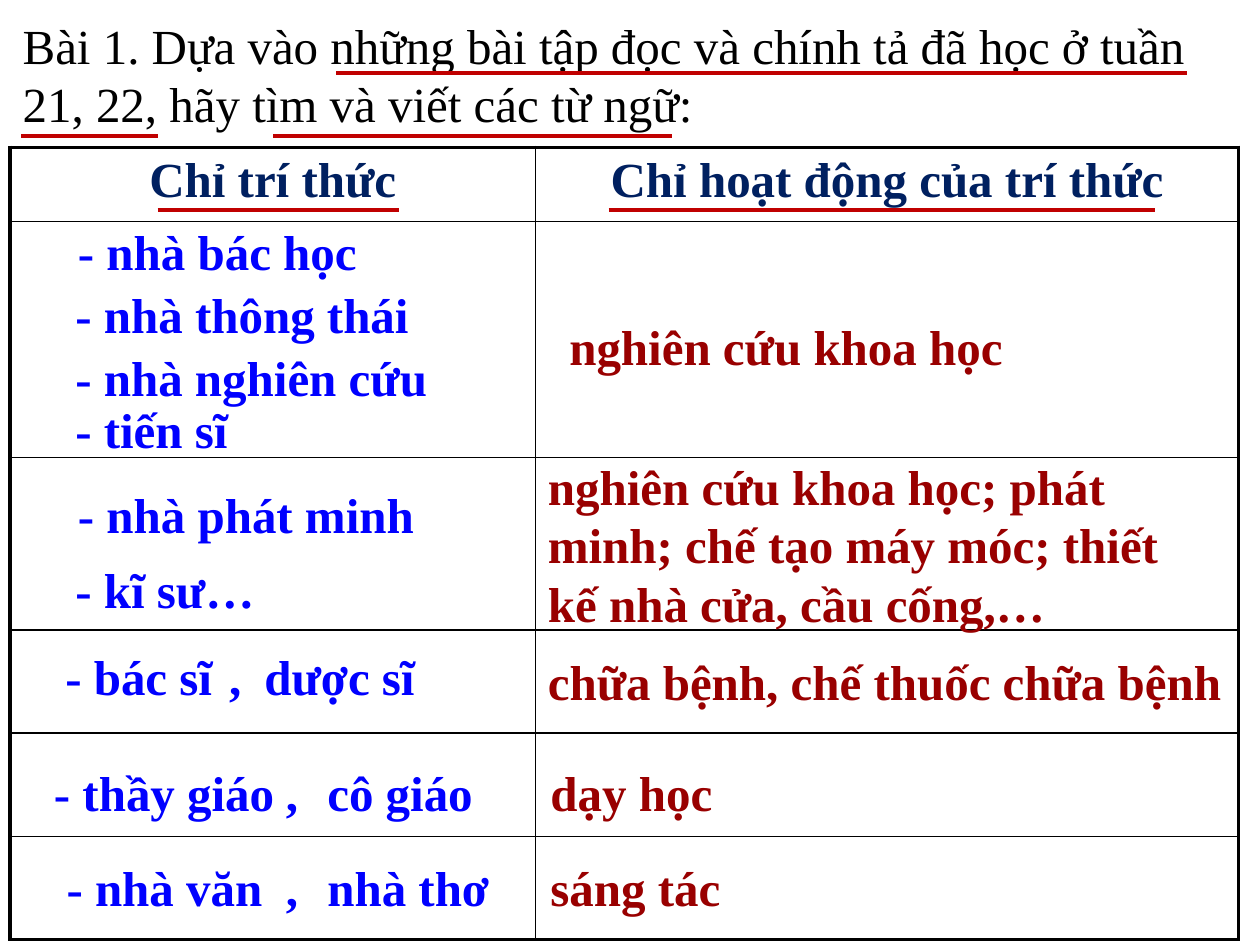
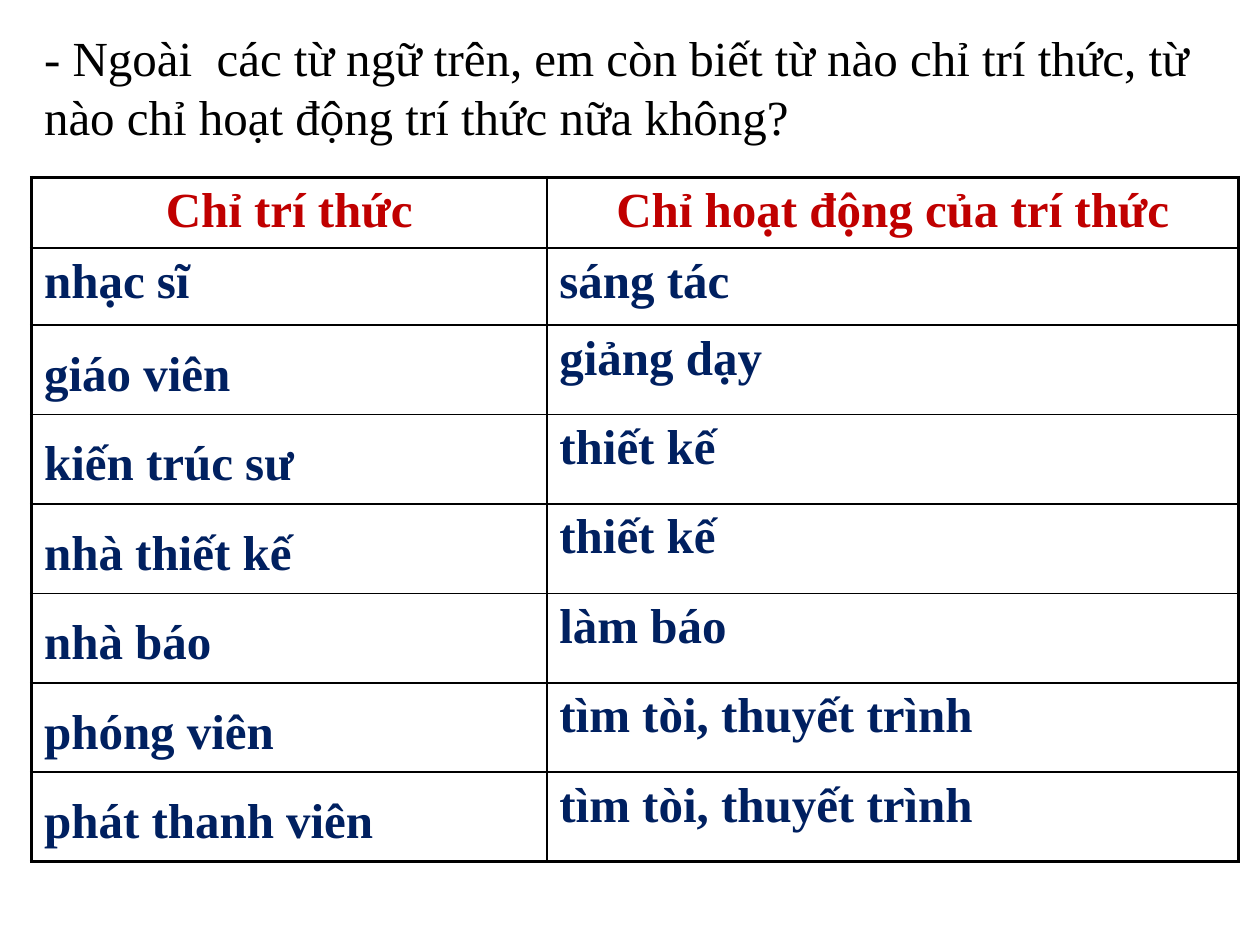
from dataclasses import dataclass

from lxml.etree import SubElement
from pptx import Presentation
from pptx.dml.color import RGBColor
from pptx.enum.shapes import MSO_CONNECTOR as Connector
from pptx.enum.text import MSO_ANCHOR as Anchor, MSO_AUTO_SIZE as AutoSize, PP_ALIGN as Align
from pptx.oxml import parse_xml
from pptx.oxml.ns import nsdecls, qn
from pptx.util import Inches, Pt

FONT = "Times New Roman"
TEXT_SIZE = Pt(28)
THICK, THIN = Pt(2.25), Pt(1)
WHITE = RGBColor(0xFF, 0xFF, 0xFF)
BLACK = RGBColor(0x00, 0x00, 0x00)
NAVY = RGBColor(0x00, 0x20, 0x60)
RED = RGBColor(0xC0, 0x00, 0x00)
BLUE = RGBColor(0x00, 0x00, 0xFF)
MAROON = RGBColor(0x99, 0x00, 0x00)
HEADINGS = ("Chỉ trí thức", "Chỉ hoạt động của trí thức")


@dataclass(frozen=True)
class Answer:
    text: str
    left: float
    top: float
    width: float
    height: float = 0.57


@dataclass(frozen=True)
class Underline:
    left: float
    right: float
    top: float


@dataclass(frozen=True)
class WordTable:
    left: float
    top: float
    columns: tuple[float, ...]
    rows: tuple[float, ...]
    heading_color: RGBColor
    words: tuple[tuple[str, str], ...] = ()


EXERCISE_TABLE = WordTable(0.08, 1.17, (4.17, 5.58), (0.59, 1.87, 1.37) + (0.82,) * 3, NAVY)
MORE_WORDS_TABLE = WordTable(
    0.25, 1.41, (4.09, 5.49), (0.56, 0.61) + (0.71,) * 6, RED,
    (
        ("nhạc sĩ", "sáng tác"),
        ("giáo viên", "giảng dạy"),
        ("kiến trúc sư", "thiết kế"),
        ("nhà thiết kế", "thiết kế"),
        ("nhà báo", "làm báo"),
        ("phóng viên", "tìm tòi, thuyết trình"),
        ("phát thanh viên", "tìm tòi, thuyết trình"),
    ),
)
PEOPLE = (
    Answer("- nhà bác học", 0.52, 1.71, 3.15),
    Answer("- nhà thông thái", 0.5, 2.21, 3.25),
    Answer("- nhà nghiên cứu", 0.5, 2.71, 3.33),
    Answer("- tiến sĩ", 0.5, 3.12, 1.83),
    Answer("- nhà phát minh", 0.52, 3.8, 3.07),
    Answer("- kĩ sư…", 0.5, 4.39, 1.83),
    Answer("- bác sĩ", 0.42, 5.08, 1.67),
    Answer(",", 1.72, 5.08, 0.5),
    Answer("dược sĩ", 2, 5.08, 1.83),
    Answer("- thầy giáo", 0.33, 6, 2.25),
    Answer(",", 2.17, 6, 0.67),
    Answer("cô giáo", 2.5, 6, 2),
    Answer("- nhà văn", 0.43, 6.76, 2.07),
    Answer(",", 2.17, 6.76, 0.67),
    Answer("nhà thơ", 2.5, 6.76, 2),
)
ACTIVITIES = (
    Answer("nghiên cứu khoa học", 4.42, 2.46, 4.42),
    Answer("nghiên cứu khoa học; phát minh; chế tạo máy móc; thiết kế nhà cửa, cầu cống,…",
           4.25, 3.57, 5.08, 1.51),
    Answer("chữa bệnh, chế thuốc chữa bệnh", 4.25, 5.12, 6),
    Answer("dạy học", 4.27, 6, 1.65),
    Answer("sáng tác", 4.27, 6.76, 1.73),
)
UNDERLINES = (
    Underline(2.67, 9.42, 0.58),
    Underline(0.17, 1.25, 1.08),
    Underline(2.17, 5.33, 1.08),
    Underline(1.25, 3.17, 1.67),
    Underline(4.83, 9.17, 1.67),
)


def write_text(text_frame, text: str, color: RGBColor, bold: bool = True, alignment=Align.LEFT) -> None:
    text_frame.text = text
    paragraph = text_frame.paragraphs[0]
    paragraph.alignment = alignment
    font = paragraph.runs[0].font
    font.name, font.size, font.bold = FONT, TEXT_SIZE, bold
    font.color.rgb = color


def add_titled_slide(presentation, question: str, left: float, top: float, width: float):
    slide = presentation.slides.add_slide(presentation.slide_layouts[5])
    title = slide.shapes.title
    title.left, title.top = Inches(left), Inches(top)
    title.width, title.height = Inches(width), Inches(1.04)
    title.fill.solid()
    title.fill.fore_color.rgb = WHITE
    title.line.color.rgb = WHITE
    title.line.width = THICK
    text_frame = title.text_frame
    text_frame.word_wrap = True
    text_frame.auto_size = AutoSize.NONE
    text_frame.vertical_anchor = Anchor.TOP
    write_text(text_frame, question, BLACK, bold=False)
    return slide


def set_borders(cell, widths: tuple[int, ...]) -> None:
    properties = cell._tc.get_or_add_tcPr()
    for position, (side, width) in enumerate(zip("LRTB", widths)):
        properties.insert(position, parse_xml(
            f'<a:ln{side} {nsdecls("a")} w="{width}"><a:solidFill>'
            f'<a:srgbClr val="{BLACK}"/></a:solidFill></a:ln{side}>'))


def add_word_table(slide, design: WordTable) -> None:
    row_count, column_count = len(design.rows), len(design.columns)
    table = slide.shapes.add_table(
        row_count, column_count, Inches(design.left), Inches(design.top),
        Inches(sum(design.columns)), Inches(sum(design.rows))).table
    table.first_row = table.horz_banding = False
    for column, width in zip(table.columns, design.columns):
        column.width = Inches(width)
    for row, height in zip(table.rows, design.rows):
        row.height = Inches(height)
    for row in range(row_count):
        for column in range(column_count):
            cell = table.cell(row, column)
            cell.fill.solid()
            cell.fill.fore_color.rgb = WHITE
            outer_sides = (column == 0, column == column_count - 1, row == 0, row == row_count - 1)
            set_borders(cell, tuple(THICK if outer else THIN for outer in outer_sides))
            if row == 0:
                write_text(cell.text_frame, HEADINGS[column], design.heading_color, alignment=Align.CENTER)
            elif design.words:
                write_text(cell.text_frame, design.words[row - 1][column], NAVY)
                if column == 0 and row > 1:
                    cell.text_frame.paragraphs[0].line_spacing = 1.3


def add_answer(slide, answer: Answer, color: RGBColor) -> None:
    text_frame = slide.shapes.add_textbox(
        Inches(answer.left), Inches(answer.top), Inches(answer.width), Inches(answer.height)).text_frame
    text_frame.word_wrap = True
    write_text(text_frame, answer.text, color)


def add_underline(slide, underline: Underline) -> None:
    connector = slide.shapes.add_connector(
        Connector.STRAIGHT, Inches(underline.left), Inches(underline.top),
        Inches(underline.right), Inches(underline.top))
    connector.line.color.rgb = RED
    connector.line.width = THICK
    SubElement(connector._element.spPr, qn("a:effectLst"))


def build_exercise_slide(presentation) -> None:
    slide = add_titled_slide(
        presentation,
        "Bài 1. Dựa vào những bài tập đọc và chính tả đã học ở tuần 21, 22, hãy tìm và viết các từ ngữ:",
        0.08, 0.07, 9.75)
    add_word_table(slide, EXERCISE_TABLE)
    for answers, color in ((PEOPLE, BLUE), (ACTIVITIES, MAROON)):
        for answer in answers:
            add_answer(slide, answer, color)
    for underline in UNDERLINES:
        add_underline(slide, underline)


def build_more_words_slide(presentation) -> None:
    slide = add_titled_slide(
        presentation,
        "- Ngoài  các từ ngữ trên, em còn biết từ nào chỉ trí thức, từ nào chỉ hoạt động trí thức nữa không?",
        0.25, 0.17, 9.5)
    add_word_table(slide, MORE_WORDS_TABLE)


def main() -> None:
    presentation = Presentation()
    presentation.slide_width, presentation.slide_height = Inches(10), Inches(7.5)
    build_exercise_slide(presentation)
    build_more_words_slide(presentation)
    presentation.save("out.pptx")


if __name__ == "__main__":
    main()
